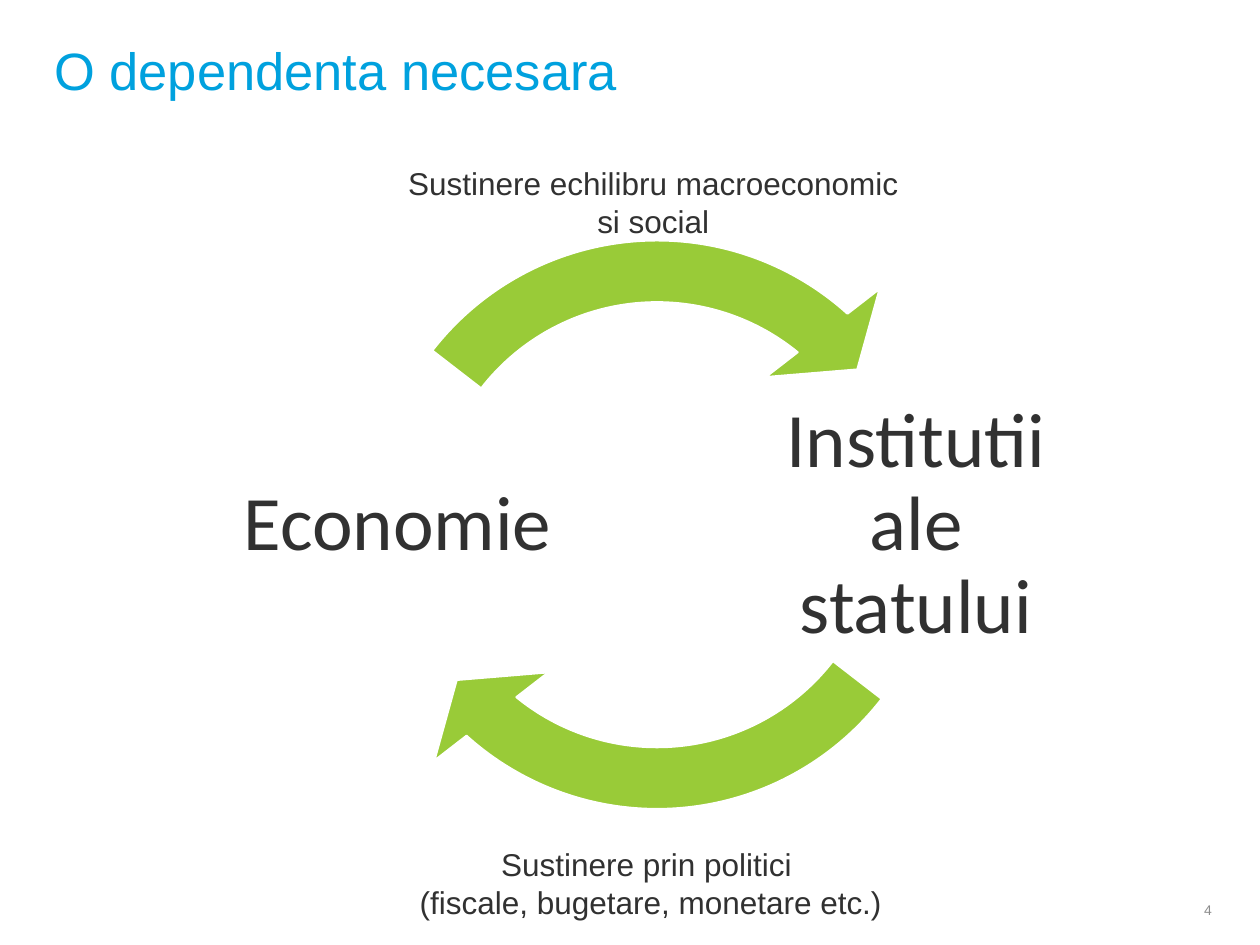
"""Builds a slide showing the two-way dependence of economy and state."""
from dataclasses import dataclass

from pptx import Presentation
from pptx.dml.color import RGBColor
from pptx.enum import shapes, text
from pptx.util import Inches, Pt


@dataclass(frozen=True)
class Theme:
    sans: str = "Arial"
    label: str = "Calibri"
    blue: str = "00A1DE"
    dark: str = "313131"
    grey: str = "8C8C8C"
    green: str = "99CB38"
    white: str = "FFFFFF"
    title_size: int = 30
    label_size: int = 44
    caption_size: int = 18
    number_size: int = 8


THEME = Theme()
TITLE = "O dependenta necesara"
TITLE_AREA = (0.33, 0.25, 7.17, 0.61)
ACTORS = [
    ("Institutii ale statului", (6.01, 2.91, 2.52, 2.52)),
    ("Economie", (1.23, 2.91, 3.85, 2.52)),
]
CAPTIONS = [
    (["Sustinere prin politici ", "(fiscale, bugetare, monetare etc.)"],
     (3.08, 6.66, 4.17, 0.71)),
    (["Sustinere echilibru macroeconomic si social"],
     (3.1, 1.25, 4.17, 0.71)),
]
PAGE_NUMBER = ("4", (8.75, 7.08, 0.87, 0.28))
CYCLE_AREA = (2.63, 1.58, 5.17, 5.17)
ARROW_TURNS = [0, 180]
HEAD_ANGLE, TAIL_ANGLE, HEAD_SWEEP = 130.8, 37.77, 11.43
BAND, HEAD_WIDTH = 0.095, 0.111
ADJUST_PER_DEGREE = 0.6


def write(box, lines, font, size, color, align,
          anchor=text.MSO_ANCHOR.TOP, inset=None, spacing=None):
    frame = box.text_frame
    frame.word_wrap = True
    frame.auto_size = text.MSO_AUTO_SIZE.NONE
    frame.vertical_anchor = anchor
    if inset is not None:
        frame.margin_left = frame.margin_right = Inches(inset)
        frame.margin_top = frame.margin_bottom = Inches(inset)
    frame.text = "\n".join(lines)
    for para in frame.paragraphs:
        para.alignment = align
        para.line_spacing = spacing
        para.font.name = font
        para.font.size = Pt(size)
        para.font.color.rgb = RGBColor.from_string(color)


def add_text(page, area, *args, **kwargs):
    box = page.shapes.add_textbox(*map(Inches, area))
    write(box, *args, **kwargs)


def add_cycle_arrow(page, turn):
    arrow = page.shapes.add_shape(
        shapes.MSO_SHAPE.CIRCULAR_ARROW, *map(Inches, CYCLE_AREA))
    angles = (HEAD_SWEEP, HEAD_ANGLE + turn, TAIL_ANGLE + turn)
    values = [BAND, *(angle * ADJUST_PER_DEGREE for angle in angles), HEAD_WIDTH]
    for index, value in enumerate(values):
        arrow.adjustments[index] = value
    arrow.shadow.inherit = False
    arrow.fill.solid()
    arrow.fill.fore_color.rgb = RGBColor.from_string(THEME.green)
    arrow.line.color.rgb = RGBColor.from_string(THEME.white)
    arrow.line.width = Pt(1.25)


def main():
    deck = Presentation()
    deck.slide_width, deck.slide_height = Inches(10), Inches(7.5)
    page = deck.slides.add_slide(deck.slide_layouts.get_by_name("Title Only"))

    title = page.shapes.title
    title.left, title.top, title.width, title.height = map(Inches, TITLE_AREA)
    write(title, [TITLE], THEME.sans, THEME.title_size, THEME.blue,
          text.PP_ALIGN.LEFT)

    for (label, area), turn in zip(ACTORS, ARROW_TURNS):
        add_text(page, area, [label], THEME.label, THEME.label_size, THEME.dark,
                 text.PP_ALIGN.CENTER, text.MSO_ANCHOR.MIDDLE, 0.06, 0.9)
        add_cycle_arrow(page, turn)

    for lines, area in CAPTIONS:
        add_text(page, area, lines, THEME.sans, THEME.caption_size, THEME.dark,
                 text.PP_ALIGN.CENTER)

    number, area = PAGE_NUMBER
    add_text(page, area, [number], THEME.sans, THEME.number_size, THEME.grey,
             text.PP_ALIGN.RIGHT, text.MSO_ANCHOR.MIDDLE, 0)

    deck.save("out.pptx")


if __name__ == "__main__":
    main()
